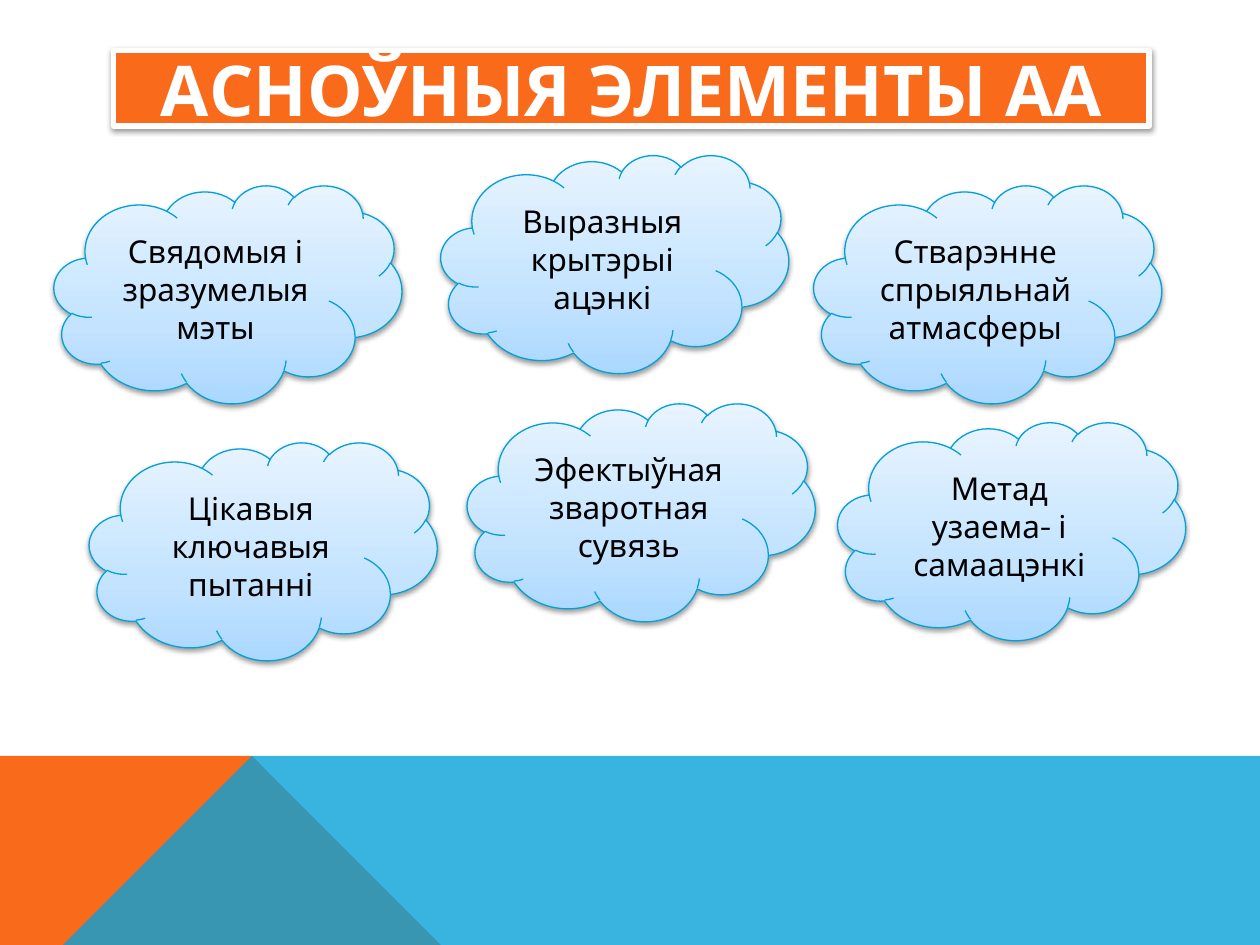
"""Build the slide of key elements: a title, six clouds and a coloured base."""
from lxml.etree import SubElement as Sub
from pptx import Presentation
from pptx.dml.color import RGBColor as RGB
from pptx.enum.shapes import MSO_SHAPE as Kind
from pptx.enum.text import MSO_ANCHOR as Anchor, PP_ALIGN as Align
from pptx.oxml.ns import qn
from pptx.util import Inches, Pt

FONT = "Karla"
WHITE = RGB(0xFF, 0xFF, 0xFF)
BLACK = RGB(0, 0, 0)
ORANGE = RGB(0xF9, 0x6A, 0x1B)
BLUE = RGB(0x08, 0xA1, 0xD9)
EDGE = RGB(0x03, 0xA0, 0xD9)
STOPS = [
    (0, RGB(0xAB, 0xD8, 0xFF)),
    (35, RGB(0xC3, 0xE3, 0xFF)),
    (100, RGB(0xE8, 0xF4, 0xFF)),
]

TITLE = "АСНОЎНЫЯ ЭЛЕМЕНТЫ АА"
CLOUDS = [
    (0.43, 1.47, "Свядомыя і зразумелыя мэты"),
    (3.5, 1.23, "Выразныя крытэрыі ацэнкі"),
    (6.46, 1.47, "Стварэнне спрыяльнай атмасферы"),
    (0.71, 3.51, "Цікавыя ключавыя пытанні"),
    (3.71, 3.2, "Эфектыўная зваротная сувязь"),
    (6.65, 3.35, "Метад узаема- і самаацэнкі"),
]
SIZE = (2.76, 1.73)
WIDE, HIGH = 10, 7.5
TOP, PEAK = 5.52, 2.23
BASE = [
    ([(0, HIGH), (0, TOP), (PEAK, TOP), (3.91, HIGH)], ORANGE, 100),
    ([(0, HIGH), (PEAK, TOP), (WIDE, TOP), (WIDE, HIGH)], BLUE, 80),
]


def add_base(slide, points, color, alpha):
    form = slide.shapes.build_freeform(*points[0], scale=Inches(1))
    form.add_line_segments(points[1:], close=True)
    shape = form.convert_to_shape()
    shape.shadow.inherit = False
    shape.fill.solid()
    shape.fill.fore_color.rgb = color
    shape.line.fill.background()
    if alpha < 100:
        tint = next(shape.fill._xPr.iter(qn("a:srgbClr")))
        Sub(tint, qn("a:alpha"), val=str(alpha * 1000))


def add_shadow(shape):
    shape.shadow.inherit = False
    effects = shape._element.spPr.find(qn("a:effectLst"))
    outer = Sub(effects, qn("a:outerShdw"), blurRad="40000", dist="20000",
                dir="5400000", rotWithShape="0")
    tint = Sub(outer, qn("a:srgbClr"), val=str(BLACK))
    Sub(tint, qn("a:alpha"), val="38000")


def add_stops(fill):
    fill.gradient()
    fill.gradient_angle = 90
    stops = next(fill._xPr.iter(qn("a:gsLst")))
    for old in list(stops):
        stops.remove(old)
    for place, color in STOPS:
        stop = Sub(stops, qn("a:gs"), pos=str(place * 1000))
        Sub(stop, qn("a:srgbClr"), val=str(color))


def add_box(slide, kind, box, text, size, color, line, width, bold=False):
    shape = slide.shapes.add_shape(kind, *map(Inches, box))
    shape.line.color.rgb = line
    shape.line.width = Pt(width)
    add_shadow(shape)
    frame = shape.text_frame
    frame.word_wrap = True
    frame.vertical_anchor = Anchor.MIDDLE
    para = frame.paragraphs[0]
    para.alignment = Align.CENTER
    run = para.add_run()
    run.text = text
    run.font.name = FONT
    run.font.size = Pt(size)
    run.font.bold = bold
    run.font.color.rgb = color
    return shape


def main():
    deck = Presentation()
    deck.slide_width, deck.slide_height = Inches(WIDE), Inches(HIGH)
    slide = deck.slides.add_slide(deck.slide_layouts[6])
    for points, color, alpha in BASE:
        add_base(slide, points, color, alpha)
    title = add_box(slide, Kind.RECTANGLE, (0.9, 0.4, 8.22, 0.6), TITLE,
                    40, WHITE, WHITE, 3, bold=True)
    title.fill.solid()
    title.fill.fore_color.rgb = ORANGE
    for left, top, text in CLOUDS:
        cloud = add_box(slide, Kind.CLOUD, (left, top, *SIZE), text,
                        18, BLACK, EDGE, 0.75)
        add_stops(cloud.fill)
    deck.save("out.pptx")


if __name__ == "__main__":
    main()
